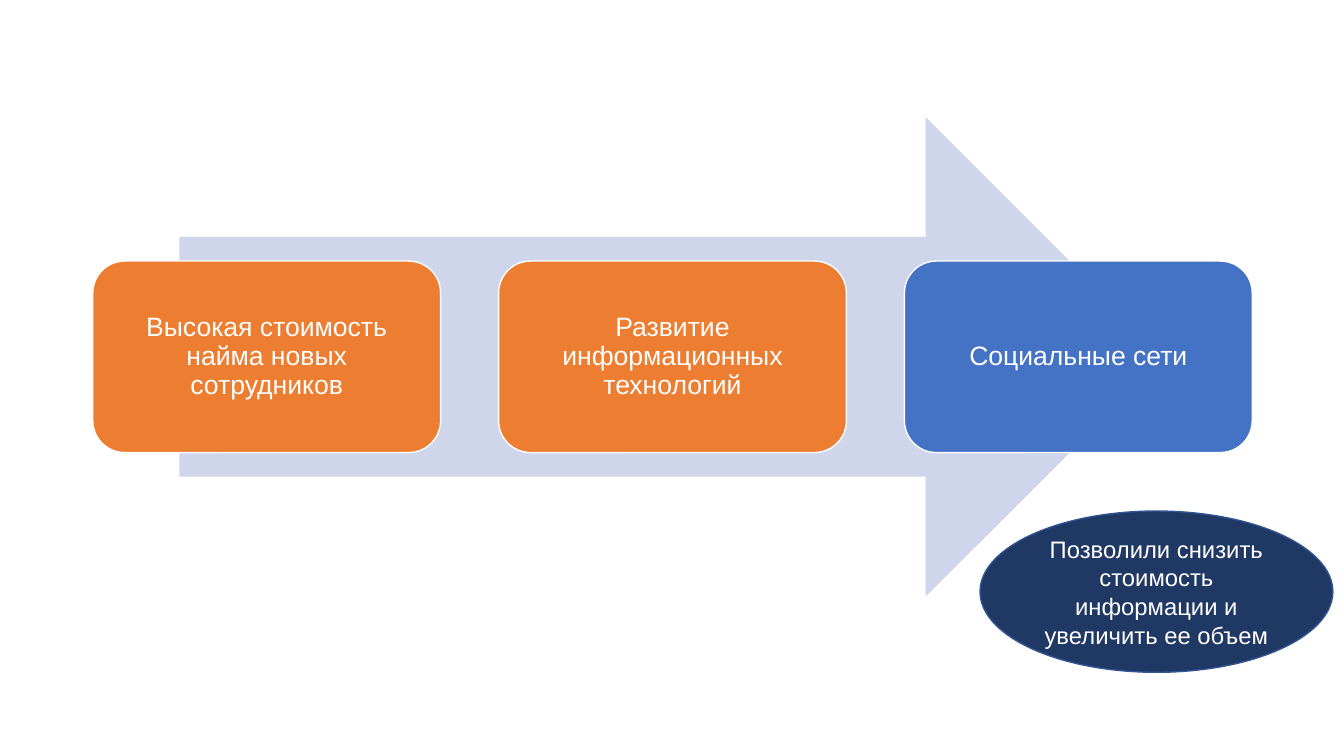
from dataclasses import dataclass

from pptx import Presentation
from pptx import util as u
from pptx.dml import color
from pptx.enum import shapes, text

WHITE = "FFFFFF"
ORANGE = "ED7D31"
BLUE = "4472C4"
STAGE_LEFT, STAGE_STEP = 0.92, 4.025


@dataclass
class Block:
    kind: shapes.MSO_SHAPE
    left: float
    top: float
    width: float
    height: float
    fill: str
    outline: str = ""
    wording: str = ""
    size: int = 19
    line_spacing: float = 1.0
    side_inset: float = 0.1
    end_inset: float = 0.05


def paint(target, value: str) -> None:
    target.rgb = color.RGBColor.from_string(value)


def write(box, block: Block) -> None:
    frame = box.text_frame
    frame_format = {
        "word_wrap": True,
        "vertical_anchor": text.MSO_ANCHOR.MIDDLE,
        "margin_left": u.Inches(block.side_inset),
        "margin_right": u.Inches(block.side_inset),
        "margin_top": u.Inches(block.end_inset),
        "margin_bottom": u.Inches(block.end_inset),
    }
    para = frame.paragraphs[0]
    span = para.add_run()
    para_format = {"alignment": text.PP_ALIGN.CENTER, "line_spacing": block.line_spacing}
    span_format = {"name": "Arial", "size": u.Pt(block.size)}
    for target, values in ((frame, frame_format), (para, para_format), (span.font, span_format)):
        for name, value in values.items():
            setattr(target, name, value)
    span.text = block.wording
    paint(span.font.color, WHITE)


def draw(page, block: Block) -> None:
    place = (block.left, block.top, block.width, block.height)
    box = page.shapes.add_shape(block.kind, *map(u.Inches, place))
    box.shadow.inherit = False
    box.fill.solid()
    paint(box.fill.fore_color, block.fill)
    if block.outline:
        paint(box.line.color, block.outline)
        box.line.width = u.Pt(1)
    else:
        box.line.fill.background()
    if block.wording:
        write(box, block)


def main() -> None:
    deck = Presentation()
    deck.slide_width, deck.slide_height = u.Inches(13.33), u.Inches(7.5)
    page = deck.slides.add_slide(deck.slide_layouts[6])

    draw(page, Block(shapes.MSO_SHAPE.RIGHT_ARROW, 1.78, 1.16, 9.78, 4.76, "CFD5EA"))
    stages = [
        ("Высокая стоимость найма новых сотрудников", ORANGE),
        ("Развитие информационных технологий", ORANGE),
        ("Cоциальные сети", BLUE),
    ]
    for index, (wording, fill) in enumerate(stages):
        left = STAGE_LEFT + index * STAGE_STEP
        draw(page, Block(shapes.MSO_SHAPE.ROUNDED_RECTANGLE, left, 2.59, 3.45, 1.9, fill, WHITE,
                         wording, line_spacing=0.9, side_inset=0.08, end_inset=0.08))
    draw(page, Block(shapes.MSO_SHAPE.OVAL, 9.72, 5.07, 3.5, 1.6, "203864", "325491",
                     "Позволили снизить стоимость информации и увеличить ее объем", size=17))

    deck.save("out.pptx")


if __name__ == "__main__":
    main()
